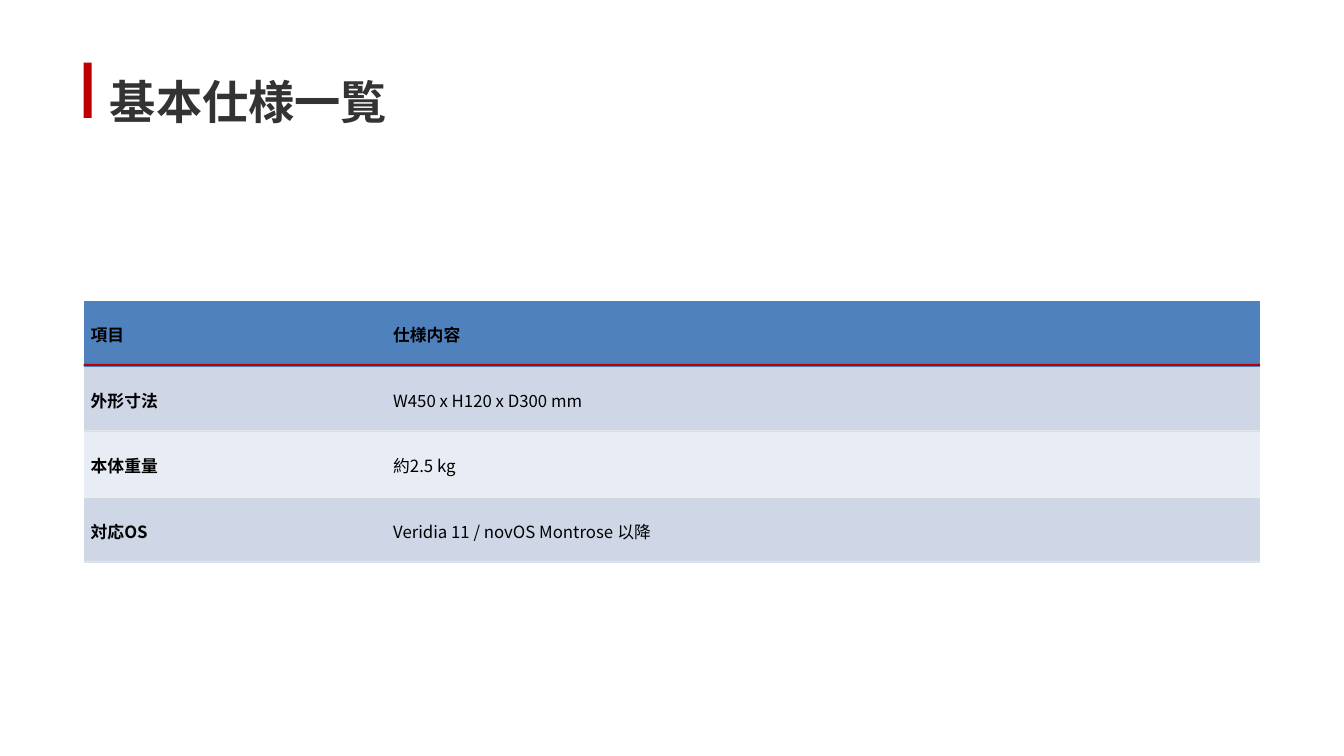
"""Build the basic specifications slide."""
from dataclasses import dataclass

from lxml.etree import SubElement
from pptx import Presentation
from pptx.dml.color import RGBColor
from pptx.enum.shapes import MSO_SHAPE
from pptx.enum.text import MSO_ANCHOR, MSO_AUTO_SIZE
from pptx.oxml.ns import qn
from pptx.slide import Slide
from pptx.table import _Cell
from pptx.text.text import _Paragraph
from pptx.util import Inches, Pt

FONT = "Noto Sans CJK JP"
RED = "C00000"
NO_GRID_STYLE = "{2D5ABB26-0587-4C30-8999-92F81FD0307C}"
LEFT, TITLE_TOP, TITLE_HEIGHT = 0.83, 0.62, 0.55
TABLE_TOP, ROW_HEIGHT = 2.99, 0.65
COLUMN_WIDTHS = (3.0, 8.67)


@dataclass(frozen=True)
class SpecRow:
    item: str
    detail: str
    fill: str
    rule_color: str = "EEEEEE"
    rule_height: float = 0.01
    heading: bool = False


SPEC_ROWS = (
    SpecRow("項目", "仕様内容", "4F81BD", RED, 0.02, True),
    SpecRow("外形寸法", "W450 x H120 x D300 mm", "CFD7E7"),
    SpecRow("本体重量", "約2.5 kg", "E8ECF4"),
    SpecRow("対応OS", "Veridia 11 / novOS Montrose 以降", "CFD7E7"),
)


def rgb(value: str) -> RGBColor:
    """Turn a hex string into a colour."""
    return RGBColor.from_string(value)


def write(paragraph: _Paragraph, text: str, size: float, color: str, bold: bool) -> None:
    """Put styled text in a paragraph."""
    paragraph.text = text
    font = paragraph.font
    font.name, font.size, font.bold = FONT, Pt(size), bold
    font.color.rgb = rgb(color)
    properties = paragraph._p.get_or_add_pPr().get_or_add_defRPr()
    SubElement(properties, qn("a:ea")).set("typeface", FONT)


def add_bar(slide: Slide, left: float, top: float, width: float, height: float, color: str) -> None:
    """Draw a plain filled rectangle."""
    bar = slide.shapes.add_shape(
        MSO_SHAPE.RECTANGLE, Inches(left), Inches(top), Inches(width), Inches(height)
    )
    bar.shadow.inherit = False
    bar.fill.solid()
    bar.fill.fore_color.rgb = rgb(color)
    bar.line.fill.background()


def add_title(slide: Slide, text: str) -> None:
    """Add the heading and its red accent."""
    heading = slide.shapes.add_textbox(
        Inches(1.09), Inches(TITLE_TOP), Inches(11.98), Inches(TITLE_HEIGHT)
    )
    frame = heading.text_frame
    frame.word_wrap = True
    frame.auto_size = MSO_AUTO_SIZE.SHAPE_TO_FIT_TEXT
    frame.margin_left = frame.margin_right = frame.margin_top = frame.margin_bottom = 0
    frame.paragraphs[0].line_spacing = 1.2
    write(frame.paragraphs[0], text, 33, "333333", True)
    add_bar(slide, LEFT, TITLE_TOP, 0.08, TITLE_HEIGHT, RED)


def fill_cell(cell: _Cell, text: str, fill: str, bold: bool) -> None:
    """Style one table cell."""
    cell.fill.solid()
    cell.fill.fore_color.rgb = rgb(fill)
    cell.vertical_anchor = MSO_ANCHOR.MIDDLE
    cell.margin_left = cell.margin_right = Inches(0.07)
    cell.margin_top = cell.margin_bottom = Inches(0.03)
    write(cell.text_frame.paragraphs[0], text, 12, "000000", bold)


def add_spec_table(slide: Slide, rows: tuple[SpecRow, ...]) -> None:
    """Add the specification table and the rules under its rows."""
    table = slide.shapes.add_table(
        len(rows), len(COLUMN_WIDTHS), Inches(LEFT), Inches(TABLE_TOP),
        Inches(sum(COLUMN_WIDTHS)), Inches(ROW_HEIGHT * len(rows)),
    ).table
    table._tbl.tblPr.find(qn("a:tableStyleId")).text = NO_GRID_STYLE
    table.first_row = table.horz_banding = False
    for column, width in zip(table.columns, COLUMN_WIDTHS):
        column.width = Inches(width)
    for index, row in enumerate(rows):
        table.rows[index].height = Inches(ROW_HEIGHT)
        fill_cell(table.cell(index, 0), row.item, row.fill, True)
        fill_cell(table.cell(index, 1), row.detail, row.fill, row.heading)
        rule_top = TABLE_TOP + ROW_HEIGHT * (index + 1) - row.rule_height - 0.01
        for column, width in enumerate(COLUMN_WIDTHS):
            rule_left = LEFT + sum(COLUMN_WIDTHS[:column])
            add_bar(slide, rule_left, rule_top, width, row.rule_height, row.rule_color)


def main() -> None:
    """Build and save the presentation."""
    presentation = Presentation()
    presentation.slide_width, presentation.slide_height = Inches(13.33), Inches(7.5)
    slide = presentation.slides.add_slide(presentation.slide_layouts[6])
    add_title(slide, "基本仕様一覧")
    add_spec_table(slide, SPEC_ROWS)
    presentation.save("out.pptx")


if __name__ == "__main__":
    main()
